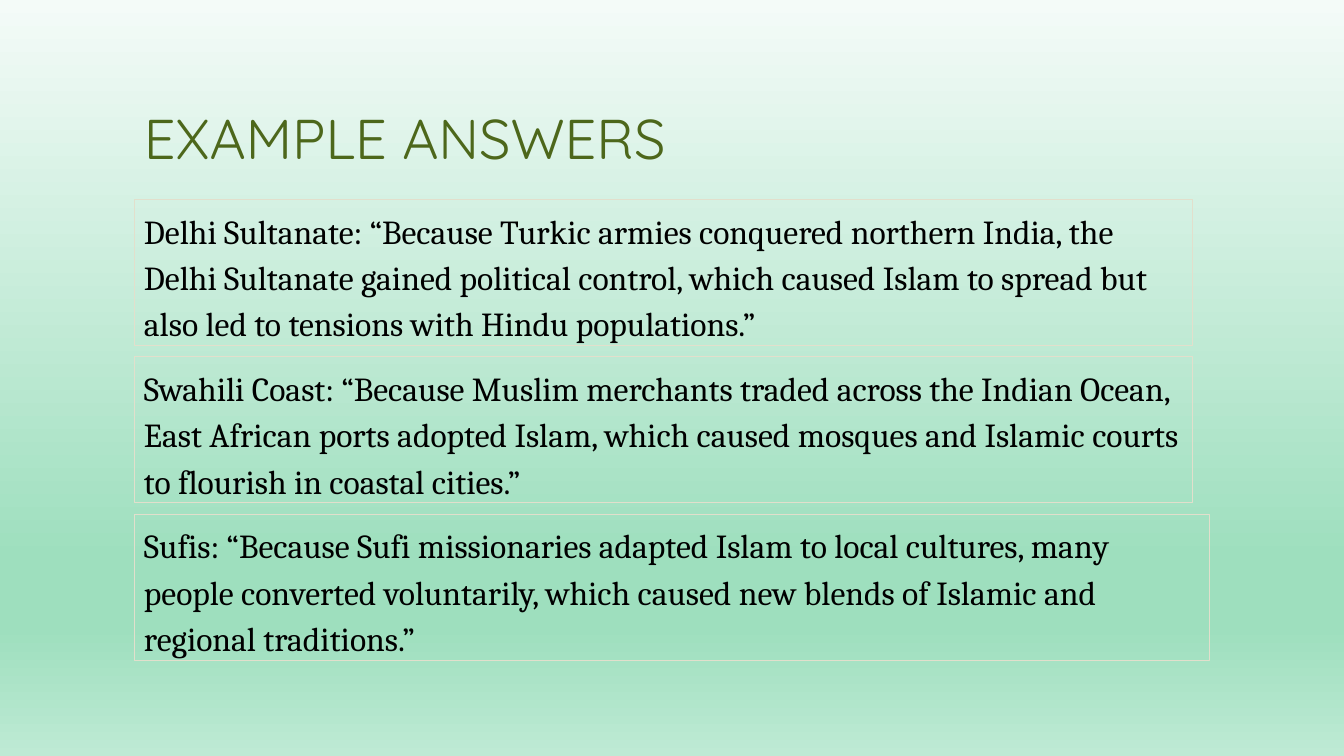
from copy import deepcopy
from dataclasses import dataclass

from pptx import Presentation
from pptx.dml.color import RGBColor
from pptx.enum.shapes import MSO_SHAPE as Shape
from pptx.enum.text import MSO_ANCHOR as Anchor, MSO_AUTO_SIZE as AutoSize, PP_ALIGN as Align
from pptx.slide import Slide
from pptx.util import Inches, Pt

GREEN = RGBColor(0x4D, 0x67, 0x1B)
BLACK = RGBColor(0, 0, 0)
SAND = RGBColor(0xE2, 0xDF, 0xCC)
PALE_MINT = RGBColor(0xF4, 0xFB, 0xF8)
MINT = RGBColor(0x9E, 0xDF, 0xBE)
LIGHT_MINT = RGBColor(0xBE, 0xEA, 0xD4)
BACKDROP_STOPS = [(0, PALE_MINT), (0.74, MINT), (0.83, MINT), (1, LIGHT_MINT)]

WIDTH, HEIGHT = 13.33, 7.5
LEFT = 1.33
ANSWER_TOP, ANSWER_HEIGHT, ANSWER_STEP = 1.98, 1.45, 1.56


@dataclass
class Answer:
    text: str
    width: float = 10.5


ANSWERS = [
    Answer("Delhi Sultanate: “Because Turkic armies conquered northern India, "
           "the Delhi Sultanate gained political control, which caused Islam "
           "to spread but also led to tensions with Hindu populations.”"),
    Answer("Swahili Coast: “Because Muslim merchants traded across the Indian "
           "Ocean, East African ports adopted Islam, which caused mosques and "
           "Islamic courts to flourish in coastal cities.”"),
    Answer("Sufis: “Because Sufi missionaries adapted Islam to local cultures, "
           "many people converted voluntarily, which caused new blends of "
           "Islamic and regional traditions.”", 10.67),
]


def add_backdrop(page: Slide) -> None:
    box = page.shapes.add_shape(Shape.RECTANGLE, 0, 0, Inches(WIDTH), Inches(HEIGHT))
    box.shadow.inherit = False
    box.line.fill.background()
    box.fill.gradient()
    box.fill.gradient_angle = 270
    # Extend the default two gradient stops to four
    stop_list = box.fill._fill._gradFill.gsLst
    for _ in range(len(BACKDROP_STOPS) - len(stop_list)):
        stop_list.append(deepcopy(stop_list[0]))
    for stop, (position, color) in zip(box.fill.gradient_stops, BACKDROP_STOPS):
        stop.position = position
        stop.color.rgb = color


def add_title(page: Slide, text: str) -> None:
    box = page.shapes.add_textbox(Inches(LEFT), Inches(0.3), Inches(10.67), Inches(1.45))
    frame = box.text_frame
    frame.word_wrap = True
    frame.vertical_anchor = Anchor.BOTTOM
    para = frame.paragraphs[0]
    para.text = text
    para.line_spacing = 0.9
    para.font.name = "Quicksand"
    para.font.size = Pt(40)
    para.font.color.rgb = GREEN


def add_answer(page: Slide, answer: Answer, top: float) -> None:
    box = page.shapes.add_shape(Shape.RECTANGLE, Inches(LEFT), Inches(top),
                                Inches(answer.width), Inches(ANSWER_HEIGHT))
    box.shadow.inherit = False
    box.fill.background()
    box.line.color.rgb = SAND
    box.line.width = Pt(0.75)
    frame = box.text_frame
    frame.word_wrap = True
    frame.auto_size = AutoSize.SHAPE_TO_FIT_TEXT
    frame.vertical_anchor = Anchor.TOP
    para = frame.paragraphs[0]
    para.text = answer.text
    para.alignment = Align.LEFT
    para.line_spacing = 1.15
    para.space_after = Pt(10)
    para.font.name = "Cambria"
    para.font.size = Pt(24)
    para.font.color.rgb = BLACK


def main() -> None:
    deck = Presentation()
    deck.slide_width, deck.slide_height = Inches(WIDTH), Inches(HEIGHT)
    page = deck.slides.add_slide(deck.slide_layouts[6])

    # Background and title
    add_backdrop(page)
    add_title(page, "EXAMPLE ANSWERS")

    # Answers, evenly stacked
    for row, answer in enumerate(ANSWERS):
        add_answer(page, answer, ANSWER_TOP + row * ANSWER_STEP)

    deck.save("out.pptx")


if __name__ == "__main__":
    main()
